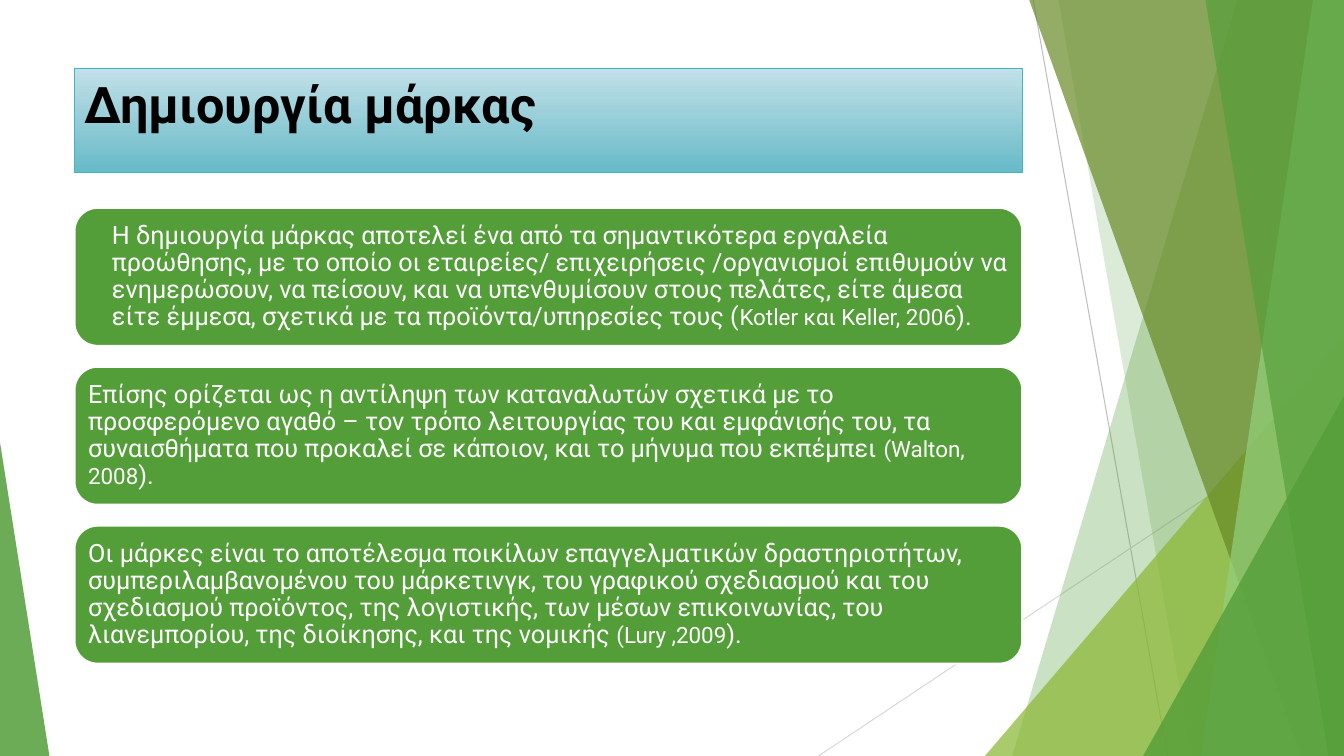
import pptx
import pptx.util
import pptx.dml.color
import pptx.enum.shapes
import pptx.enum.text
import pptx.oxml.ns
from lxml import etree

Pt = pptx.util.Pt
SHAPE = pptx.enum.shapes.MSO_SHAPE
ANCHOR = pptx.enum.text.MSO_ANCHOR
ALIGN = pptx.enum.text.PP_ALIGN
qn = pptx.oxml.ns.qn

WIDTH, HEIGHT, TOP = 960, 540, -0.6
FONT = "Roboto"
COLORS = {
    "green": "549E39", "lime": "8AB833", "olive": "678A26", "mint": "93D07D",
    "white": "FFFFFF", "black": "000000", "grey": "BFBFBF", "light_grey": "D9D9D9",
    "title_top": "C2E0E7", "title_bottom": "67BAC8", "title_line": "40B4C8",
}
CARDS = [
    ("Η δημιουργία μάρκας αποτελεί ένα από τα σημαντικότερα εργαλεία προώθησης, "
     "με το οποίο οι εταιρείες/ επιχειρήσεις /οργανισμοί επιθυμούν να ενημερώσουν, "
     "να πείσουν, και να υπενθυμίσουν στους πελάτες, είτε άμεσα είτε έμμεσα, "
     "σχετικά με τα προϊόντα/υπηρεσίες τους (", "Kotler και Keller, 2006", 17),
    ("Επίσης ορίζεται ως η αντίληψη των καταναλωτών σχετικά με το προσφερόμενο "
     "αγαθό – τον τρόπο λειτουργίας του και εμφάνισής του, τα συναισθήματα που "
     "προκαλεί σε κάποιον, και το μήνυμα που εκπέμπει ", "(Walton, 2008", 0),
    ("Οι μάρκες είναι το αποτέλεσμα ποικίλων επαγγελματικών δραστηριοτήτων, "
     "συμπεριλαμβανομένου του μάρκετινγκ, του γραφικού σχεδιασμού και του "
     "σχεδιασμού προϊόντος, της λογιστικής, των μέσων επικοινωνίας, του "
     "λιανεμπορίου, της διοίκησης, και της νομικής ", "(Lury ,2009", 0),
]


def rgb(name):
    return pptx.dml.color.RGBColor.from_string(COLORS[name])


def fill_shape(sp, color, opacity=100):
    sp.shadow.inherit = False
    sp.fill.solid()
    sp.fill.fore_color.rgb = rgb(color)
    if opacity < 100:
        clr = sp.fill._xPr.find(".//" + qn("a:srgbClr"))
        etree.SubElement(clr, qn("a:alpha")).set("val", str(opacity * 1000))
    sp.line.fill.background()


def add_line(s, x1, y1, x2, y2, color):
    ln = s.shapes.add_connector(pptx.enum.shapes.MSO_CONNECTOR.STRAIGHT,
                                Pt(x1), Pt(y1), Pt(x2), Pt(y2))
    ln.line.color.rgb = rgb(color)
    ln.line.width = Pt(0.75)
    etree.SubElement(ln._element.spPr, qn("a:effectLst"))


def add_band(s, top_left, bottom_left, color, opacity):
    fb = s.shapes.build_freeform(Pt(top_left), Pt(TOP))
    corners = [(WIDTH, TOP), (WIDTH, HEIGHT), (bottom_left, HEIGHT)]
    fb.add_line_segments([(Pt(x), Pt(y)) for x, y in corners], close=True)
    fill_shape(fb.convert_to_shape(), color, opacity)


def add_triangle(s, x, y, w, apex, color, opacity):
    sp = s.shapes.add_shape(SHAPE.ISOSCELES_TRIANGLE, Pt(x), Pt(y), Pt(w), Pt(HEIGHT - y))
    sp.adjustments[0] = apex
    fill_shape(sp, color, opacity)


def format_run(r, size, color, bold=False):
    r.font.name = FONT
    r.font.size = Pt(size)
    r.font.bold = bold
    r.font.color.rgb = rgb(color)


def add_title(s, text):
    sp = s.shapes.add_shape(SHAPE.RECTANGLE, Pt(53.2), Pt(49), Pt(677), Pt(74))
    sp.shadow.inherit = False
    sp.fill.gradient()
    sp.fill.gradient_angle = 270
    for stop, name, position in zip(sp.fill.gradient_stops,
                                    ("title_top", "title_bottom"), (0, 1)):
        stop.color.rgb = rgb(name)
        stop.position = position
    sp.line.color.rgb = rgb("title_line")
    sp.line.width = Pt(0.75)
    tf = sp.text_frame
    tf.text = text
    tf.word_wrap = True
    tf.vertical_anchor = ANCHOR.TOP
    p = tf.paragraphs[0]
    p.alignment = ALIGN.LEFT
    format_run(p.runs[0], 36, "black", True)


def add_card(s, y, text, citation, indent):
    sp = s.shapes.add_shape(SHAPE.ROUNDED_RECTANGLE, Pt(53.2), Pt(y), Pt(677), Pt(98.6))
    fill_shape(sp, "green")
    sp.line.color.rgb = rgb("white")
    sp.line.width = Pt(1.5)
    tf = sp.text_frame
    tf.word_wrap = True
    tf.vertical_anchor = ANCHOR.MIDDLE
    tf.margin_left = tf.margin_right = tf.margin_top = tf.margin_bottom = Pt(5)
    p = tf.paragraphs[0]
    p.alignment = ALIGN.LEFT
    p.line_spacing = 0.9
    p._p.get_or_add_pPr().set("marL", str(Pt(indent)))
    for part, size in ((text, 18), (citation, 16), (").", 18)):
        r = p.add_run()
        r.text = part
        format_run(r, size, "white")


def add_backdrop(s):
    add_line(s, 738, 0, 834, HEIGHT, "grey")
    add_line(s, WIDTH, 290, 584.6, HEIGHT, "light_grey")
    add_band(s, 884, 723, "green", 30)
    add_band(s, 756, 851, "green", 20)
    add_triangle(s, 703.5, 240, 256.5, 1, "lime", 72)
    add_band(s, 735, 929.5, "olive", 70)
    add_band(s, 938, 858, "mint", 70)
    add_band(s, 861, 949, "green", 65)
    add_triangle(s, 816.5, 283, 143.5, 1, "green", 80)
    add_triangle(s, 0, 316, 35.3, 0, "green", 85)


def main():
    prs = pptx.Presentation()
    prs.slide_width, prs.slide_height = Pt(WIDTH), Pt(HEIGHT)
    s = prs.slides.add_slide(prs.slide_layouts[6])
    add_backdrop(s)
    add_title(s, "Δημιουργία μάρκας")
    for i, card in enumerate(CARDS):
        add_card(s, 148.5 + 113.5 * i, *card)
    prs.save("out.pptx")


if __name__ == "__main__":
    main()
